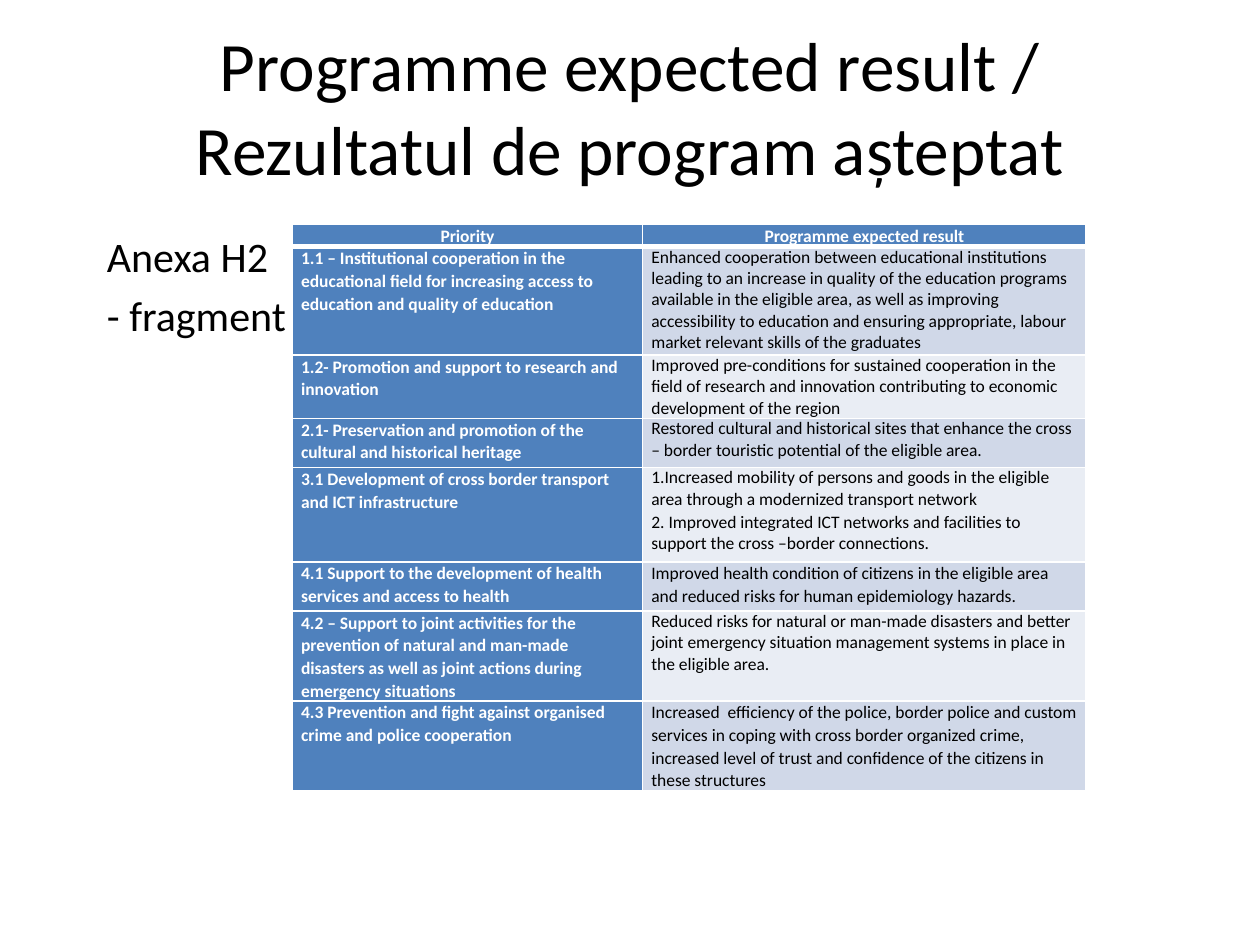
from dataclasses import dataclass

from lxml.etree import SubElement
from pptx import Presentation
from pptx.dml.color import RGBColor
from pptx.enum.text import MSO_ANCHOR, PP_ALIGN
from pptx.oxml.ns import qn
from pptx.util import Inches, Pt


@dataclass(frozen=True)
class Theme:
    """Colours, typeface and type sizes of the slide."""
    font: str = "Calibri"
    ink: str = "000000"
    white: str = "FFFFFF"
    accent: str = "4F81BD"
    bands: tuple = ("D0D8E8", "E9EDF4")
    title_size: float = 39.6
    note_size: float = 24
    table_size: float = 10
    table_spacing: float = 1.07
    rule: float = 1
    header_rule: float = 3


@dataclass(frozen=True)
class PriorityRow:
    """One priority, its expected results, row height and result line spacing."""
    priority: str
    results: tuple
    height: float
    spacing: float = 1.0


THEME = Theme()
HEADINGS = ("Priority", "Programme expected result")
HEADER_HEIGHT = 0.13
COLUMN_WIDTHS = (2.78, 3.52)
ROWS = (
    PriorityRow(
        "1.1 – Institutional cooperation in the educational field for increasing access to "
        "education and quality of education",
        ("Enhanced cooperation between educational institutions leading to an increase in "
         "quality of the education programs available in the eligible area, as well as "
         "improving accessibility to education and ensuring appropriate, labour market "
         "relevant skills of the graduates",), 0.86),
    PriorityRow(
        "1.2- Promotion and support to research and innovation",
        ("Improved pre-conditions for sustained cooperation in the field of research and "
         "innovation contributing to economic development of the region",), 0.49),
    PriorityRow(
        "2.1- Preservation and promotion of the cultural and historical heritage",
        ("Restored cultural and historical sites that enhance the cross – border touristic "
         "potential of the eligible area.",), 0.39),
    PriorityRow(
        "3.1 Development of cross border transport and ICT infrastructure",
        ("1.Increased mobility of persons and goods in the eligible area through a "
         "modernized transport network",
         "2. Improved integrated ICT networks and facilities to support the cross –border "
         "connections."), 0.75),
    PriorityRow(
        "4.1 Support to the development of health services and access to health",
        ("Improved health condition of citizens in the eligible area and reduced risks for "
         "human epidemiology hazards.",), 0.39, THEME.table_spacing),
    PriorityRow(
        "4.2 – Support to joint activities for the prevention of natural and man-made "
        "disasters as well as joint actions during emergency situations",
        ("Reduced risks for natural or man-made disasters and better joint emergency "
         "situation management systems in place in the eligible area.",), 0.65),
    PriorityRow(
        "4.3 Prevention and fight against organised crime and police cooperation",
        ("Increased  efficiency of the police, border police and custom services in coping "
         "with cross border organized crime, increased level of trust and confidence of the "
         "citizens in these structures",), 0.65, THEME.table_spacing),
)


def write(frame, lines, size, color, bold=False, align=PP_ALIGN.LEFT, spacing=1.0,
          before=0, after=0):
    """Fill a text frame with one formatted paragraph per line."""
    frame.word_wrap = True
    frame.text = "\n".join(lines)
    for index, paragraph in enumerate(frame.paragraphs):
        paragraph.alignment = align
        paragraph.line_spacing = spacing
        paragraph.space_before = Pt(before if index else 0)
        paragraph.space_after = Pt(after)
        for run in paragraph.runs:
            run.font.name = THEME.font
            run.font.size = Pt(size)
            run.font.bold = bold
            run.font.color.rgb = RGBColor.from_string(color)


def add_title(slide, left, top, width, height):
    """Place the centred slide title in its box."""
    title = slide.shapes.add_textbox(left, top, width, height).text_frame
    title.vertical_anchor = MSO_ANCHOR.MIDDLE
    write(title, ["Programme expected result / Rezultatul de program așteptat"],
          THEME.title_size, THEME.ink, align=PP_ALIGN.CENTER)


def add_annex_note(slide, left, top, width, height):
    """Place the annex reference in its box."""
    note = slide.shapes.add_textbox(left, top, width, height).text_frame
    write(note, ["Anexa H2", "- fragment"], THEME.note_size, THEME.ink,
          before=0.2 * THEME.note_size)


def style_cell(cell, fill, top_rule, bottom_rule):
    """Set the margins, white borders and fill of a table cell."""
    cell.margin_left = cell.margin_right = Inches(0.07)
    cell.margin_top = cell.margin_bottom = 0
    properties = cell._tc.get_or_add_tcPr()
    rules = {"L": THEME.rule, "R": THEME.rule, "T": top_rule, "B": bottom_rule}
    for side, weight in rules.items():
        border = SubElement(properties, qn(f"a:ln{side}"), w=str(Pt(weight)))
        SubElement(SubElement(border, qn("a:solidFill")), qn("a:srgbClr"), val=THEME.white)
    cell.fill.solid()
    cell.fill.fore_color.rgb = RGBColor.from_string(fill)


def add_results_table(slide, left, top, width, height):
    """Place the table of priorities and expected results in its box."""
    table = slide.shapes.add_table(len(ROWS) + 1, len(HEADINGS), left, top, width, height).table
    for column, column_width in zip(table.columns, COLUMN_WIDTHS):
        column.width = Inches(column_width)
    table.rows[0].height = Inches(HEADER_HEIGHT)
    for cell, heading in zip(table.rows[0].cells, HEADINGS):
        style_cell(cell, THEME.accent, THEME.rule, THEME.header_rule)
        cell.vertical_anchor = MSO_ANCHOR.MIDDLE
        write(cell.text_frame, [heading], THEME.table_size, THEME.white, True,
              PP_ALIGN.CENTER, THEME.table_spacing, after=8)
    for index, row in enumerate(ROWS):
        table.rows[index + 1].height = Inches(row.height)
        priority, result = table.rows[index + 1].cells
        top_rule = THEME.rule if index else THEME.header_rule
        style_cell(priority, THEME.accent, top_rule, THEME.rule)
        style_cell(result, THEME.bands[index % 2], top_rule, THEME.rule)
        write(priority.text_frame, [row.priority], THEME.table_size, THEME.white, True,
              spacing=THEME.table_spacing, after=1)
        write(result.text_frame, row.results, THEME.table_size, THEME.ink,
              spacing=row.spacing, after=1)


def main():
    """Build and save the slide."""
    presentation = Presentation()
    presentation.slide_width, presentation.slide_height = Inches(10), Inches(7.5)
    slide = presentation.slides.add_slide(presentation.slide_layouts[6])
    add_title(slide, Inches(0.75), Inches(0.29), Inches(8.5), Inches(1.1))
    add_annex_note(slide, Inches(0.75), Inches(1.78), Inches(8.58), Inches(4.57))
    add_results_table(slide, Inches(2.32), Inches(1.78), Inches(6.3), Inches(4.49))
    presentation.save("out.pptx")


if __name__ == "__main__":
    main()
